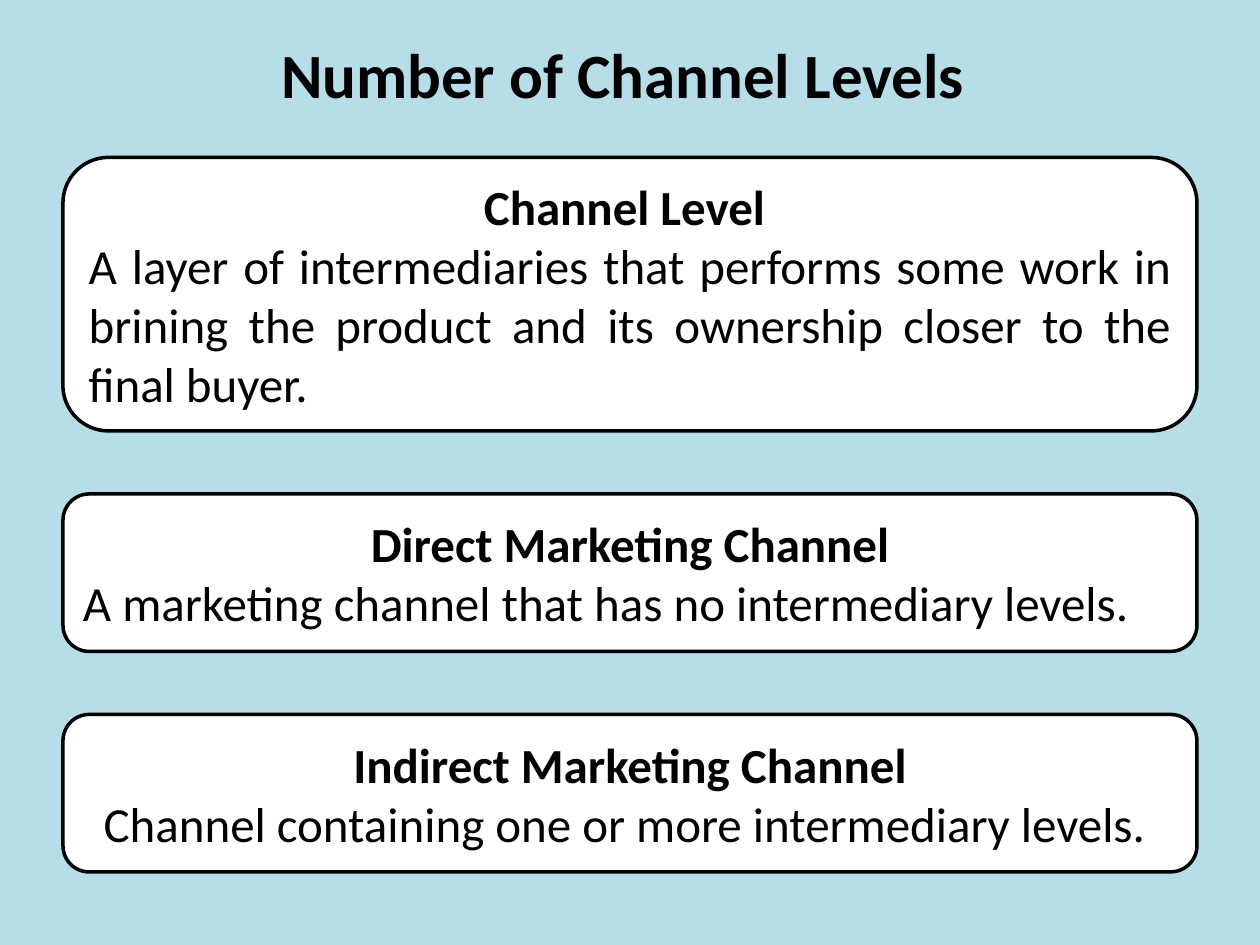
from dataclasses import dataclass

from pptx import Presentation
from pptx.dml.color import RGBColor
from pptx.enum.shapes import MSO_SHAPE as Preset
from pptx.enum.text import MSO_ANCHOR as Anchor, MSO_AUTO_SIZE as AutoSize, PP_ALIGN as Align
from pptx.slide import Slide
from pptx.text.text import TextFrame
from pptx.util import Inches, Pt


@dataclass(frozen=True)
class Theme:
    """Colours, font and sizes of the slide."""
    background: RGBColor = RGBColor.from_string("B7DEE8")
    panel: RGBColor = RGBColor.from_string("FFFFFF")
    ink: RGBColor = RGBColor.from_string("000000")
    font: str = "Calibri"
    title_size: int = 36
    body_size: int = 28
    outline: int = 2


@dataclass(frozen=True)
class Definition:
    """A term with its meaning, shown in one rounded panel."""
    term: str
    meaning: str
    height: float
    meaning_align: Align = Align.JUSTIFY


THEME = Theme()
MARGIN, WIDTH, FIRST_TOP, GAP = 0.5, 9, 1.25, 0.5
TITLE = "Number of Channel Levels "
DEFINITIONS = (
    Definition(
        "Channel Level ",
        "A layer of intermediaries that performs some work in brining the product "
        "and its ownership closer to the final buyer.",
        2.17,
    ),
    Definition("Direct Marketing Channel",
               "A marketing channel that has no intermediary levels. ", 1.25),
    Definition("Indirect Marketing Channel",
               "Channel containing one or more intermediary levels. ", 1.25, Align.CENTER),
)


def write_line(frame: TextFrame, index: int, text: str, size: int, bold: bool, align: Align) -> None:
    """Write one styled paragraph, adding it when the frame lacks it."""
    paragraph = frame.paragraphs[0] if index == 0 else frame.add_paragraph()
    paragraph.alignment = align
    run = paragraph.add_run()
    run.text = text
    run.font.name = THEME.font
    run.font.size = Pt(size)
    run.font.bold = bold
    run.font.color.rgb = THEME.ink


def write_title(slide: Slide) -> None:
    """Place and fill the title placeholder."""
    title = slide.shapes.title
    title.left, title.top = Inches(MARGIN), Inches(0.25)
    title.width, title.height = Inches(WIDTH), Inches(0.67)
    frame = title.text_frame
    frame.auto_size = AutoSize.NONE
    frame.vertical_anchor = Anchor.MIDDLE
    write_line(frame, 0, TITLE, THEME.title_size, True, Align.CENTER)


def draw_definition(slide: Slide, definition: Definition, top: float) -> None:
    """Draw a rounded panel holding a term and its meaning."""
    panel = slide.shapes.add_shape(Preset.ROUNDED_RECTANGLE, Inches(MARGIN), Inches(top),
                                   Inches(WIDTH), Inches(definition.height))
    panel.shadow.inherit = False
    panel.fill.solid()
    panel.fill.fore_color.rgb = THEME.panel
    panel.line.color.rgb = THEME.ink
    panel.line.width = Pt(THEME.outline)
    frame = panel.text_frame
    frame.word_wrap = True
    frame.vertical_anchor = Anchor.MIDDLE
    write_line(frame, 0, definition.term, THEME.body_size, True, Align.CENTER)
    write_line(frame, 1, definition.meaning, THEME.body_size, False, definition.meaning_align)


def main() -> None:
    """Build and save the slide."""
    deck = Presentation()
    deck.slide_width, deck.slide_height = Inches(10), Inches(7.5)
    slide = deck.slides.add_slide(deck.slide_layouts.get_by_name("Title Only"))
    slide.background.fill.solid()
    slide.background.fill.fore_color.rgb = THEME.background
    write_title(slide)
    top = FIRST_TOP
    for definition in DEFINITIONS:
        draw_definition(slide, definition, top)
        top += definition.height + GAP
    deck.save("out.pptx")


if __name__ == "__main__":
    main()
